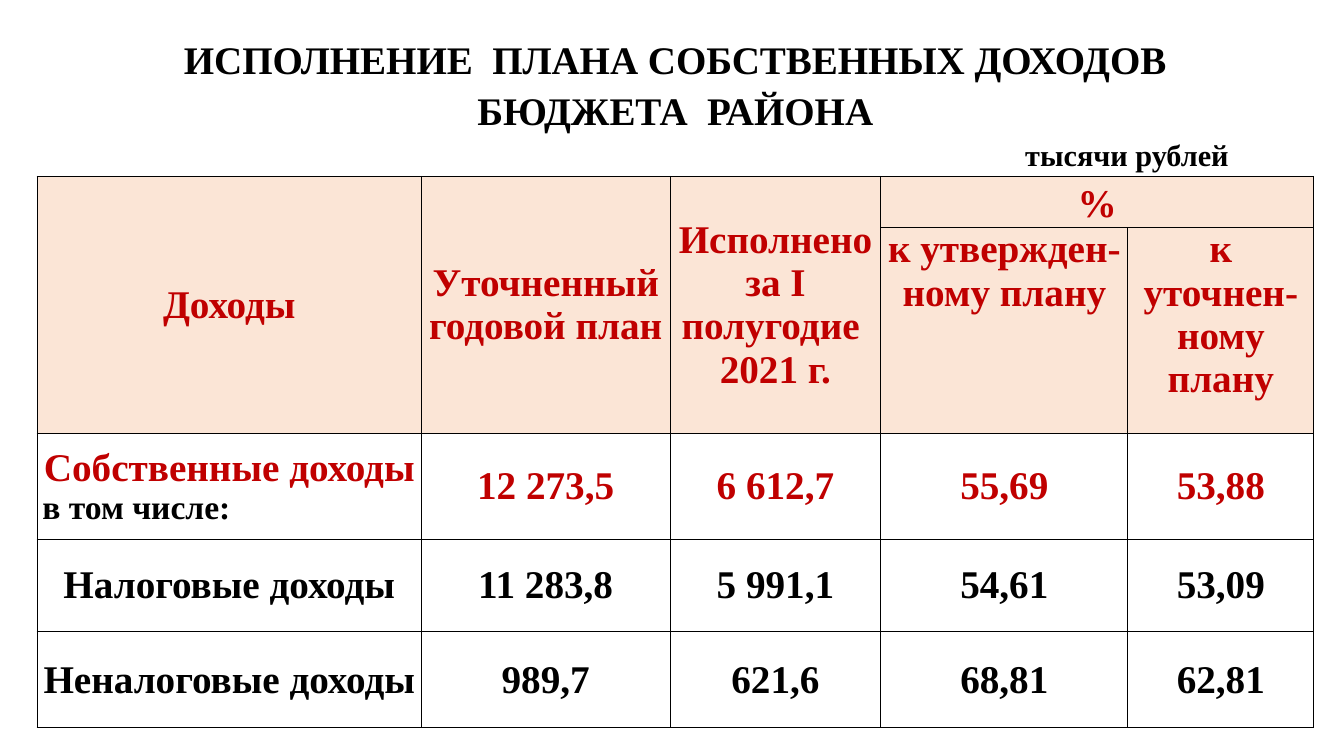
import pptx
import pptx.dml.color
import pptx.enum.text
import pptx.oxml
import pptx.oxml.ns
import pptx.util

Pt = pptx.util.Pt
RGBColor = pptx.dml.color.RGBColor
ALIGN = pptx.enum.text.PP_ALIGN
ANCHOR = pptx.enum.text.MSO_ANCHOR

BLACK = RGBColor(0x00, 0x00, 0x00)
RED = RGBColor(0xC0, 0x00, 0x00)
PEACH = RGBColor(0xFB, 0xE5, 0xD6)
WHITE = RGBColor(0xFF, 0xFF, 0xFF)

COLUMN_WIDTHS = [274.3, 177.8, 150.5, 176.5, 132.8]
ROW_HEIGHTS = [36.7, 146.9, 75.6, 66.2, 68.4]

# Row, column, rows spanned, columns spanned, lines, anchor, line spacing
HEADERS = [
    (0, 0, 2, 1, ["Доходы"], ANCHOR.MIDDLE, 1),
    (0, 1, 2, 1, ["Уточненный годовой план"], ANCHOR.MIDDLE, 1),
    (0, 2, 2, 1, ["Исполнено за I полугодие  2021 г."], ANCHOR.MIDDLE, 1),
    (0, 3, 1, 2, ["%"], ANCHOR.TOP, 1.15),
    (1, 3, 1, 1, ["к утвержден-", "ному плану"], ANCHOR.TOP, 1),
    (1, 4, 1, 1, ["к уточнен-ному плану"], ANCHOR.TOP, 1),
]
INCOME_ROWS = [
    (RED, ["Собственные доходы", "12 273,5", "6 612,7", "55,69", "53,88"]),
    (BLACK, ["Налоговые доходы", "11 283,8", "5 991,1", "54,61", "53,09"]),
    (BLACK, ["Неналоговые доходы", "989,7", "621,6", "68,81", "62,81"]),
]


def write_text(paragraph, text, size=28, color=BLACK, align=ALIGN.CENTER, spacing=1):
    """Fill a paragraph with one bold run."""
    paragraph.alignment = align
    paragraph.line_spacing = spacing
    paragraph.space_before = paragraph.space_after = Pt(0)
    run = paragraph.add_run()
    run.text = text
    run.font.name = "Times New Roman"
    run.font.size = Pt(size)
    run.font.bold = True
    run.font.color.rgb = color


class SlideBuilder:
    def __init__(self, slide):
        self.slide = slide
        self.border_width = 1
        self.border_color = BLACK
        self.cell_margin = 3.6

    def title(self, text, unit, left, top, width, height):
        shape = self.slide.shapes.title
        shape.left, shape.top, shape.width, shape.height = map(
            Pt, (left, top, width, height))
        frame = shape.text_frame
        frame.word_wrap = True
        frame.auto_size = pptx.enum.text.MSO_AUTO_SIZE.NONE
        frame.vertical_anchor = ANCHOR.MIDDLE
        frame.margin_left = frame.margin_right = Pt(18.7)
        write_text(frame.paragraphs[0], text, size=27.9, spacing=1.09)
        write_text(frame.add_paragraph(), unit, size=21.6,
                   align=ALIGN.RIGHT, spacing=1.09)

    def table(self, left, top, widths, heights):
        frame = self.slide.shapes.add_table(
            len(heights), len(widths), Pt(left), Pt(top),
            Pt(sum(widths)), Pt(sum(heights)))
        table = frame.table
        table.first_row = table.horz_banding = False
        for column, width in zip(table.columns, widths):
            column.width = Pt(width)
        for row, height in zip(table.rows, heights):
            row.height = Pt(height)
        for cell in table.iter_cells():
            self.border(cell)
            cell.margin_left = cell.margin_right = Pt(self.cell_margin)
            cell.margin_top = cell.margin_bottom = Pt(0)
        return table

    def border(self, cell):
        properties = cell._tc.get_or_add_tcPr()
        for side in "LRTB":
            properties.append(pptx.oxml.parse_xml(
                f'<a:ln{side} {pptx.oxml.ns.nsdecls("a")} w="{Pt(self.border_width)}">'
                f'<a:solidFill><a:srgbClr val="{self.border_color}"/></a:solidFill>'
                f'</a:ln{side}>'))

    def cell(self, cell, lines, fill, anchor=ANCHOR.MIDDLE, **text_format):
        cell.fill.solid()
        cell.fill.fore_color.rgb = fill
        cell.vertical_anchor = anchor
        frame = cell.text_frame
        for index, line in enumerate(lines):
            paragraph = frame.add_paragraph() if index else frame.paragraphs[0]
            write_text(paragraph, line, **text_format)


def main():
    presentation = pptx.Presentation()
    presentation.slide_width = Pt(960)
    presentation.slide_height = Pt(540)
    slide = presentation.slides.add_slide(presentation.slide_layouts[5])
    builder = SlideBuilder(slide)

    # Title with the unit of measure
    builder.title("ИСПОЛНЕНИЕ  ПЛАНА СОБСТВЕННЫХ ДОХОДОВ БЮДЖЕТА  РАЙОНА",
                  "тысячи рублей", 68.4, 28, 828, 90)

    # Table header
    table = builder.table(26.6, 126, COLUMN_WIDTHS, ROW_HEIGHTS)
    for row, column, row_span, column_span, lines, anchor, spacing in HEADERS:
        cell = table.cell(row, column)
        if row_span * column_span > 1:
            cell.merge(table.cell(row + row_span - 1, column + column_span - 1))
        builder.cell(cell, lines, PEACH, anchor, color=RED, spacing=spacing)

    # Income figures
    for row, (color, values) in enumerate(INCOME_ROWS, start=2):
        for column, value in enumerate(values):
            builder.cell(table.cell(row, column), [value], WHITE, color=color)
    write_text(table.cell(2, 0).text_frame.add_paragraph(), "в том числе:",
               size=24, align=ALIGN.LEFT)

    presentation.save("out.pptx")


if __name__ == "__main__":
    main()
